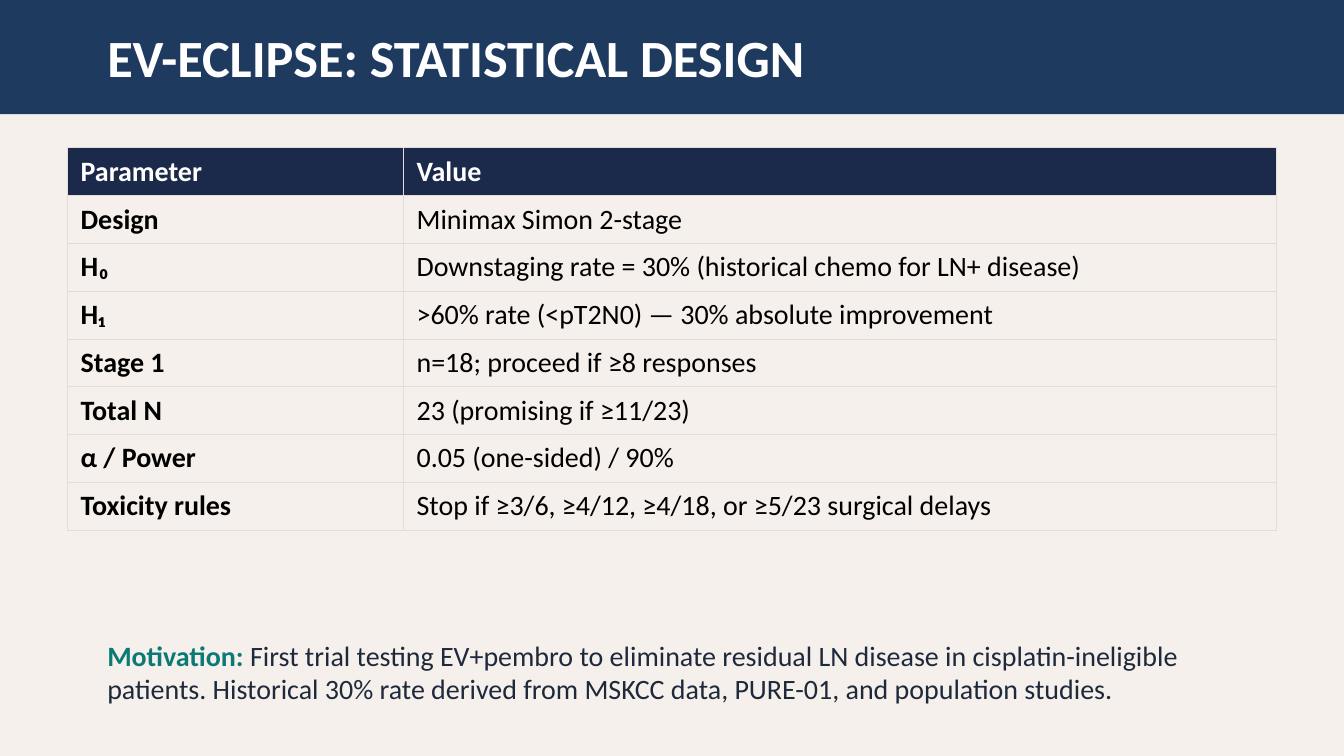
from lxml import etree
from pptx import Presentation
from pptx.dml.color import RGBColor
from pptx.enum import shapes, text
from pptx.oxml import ns
from pptx.util import Pt


def color(hex_string):
    return RGBColor.from_string(hex_string)


def style_run(run, size, hex_string, bold):
    run.font.name = "Calibri"
    run.font.size = Pt(size)
    run.font.bold = bold
    run.font.color.rgb = color(hex_string)


presentation = Presentation()
presentation.slide_width, presentation.slide_height = Pt(720), Pt(405)
slide = presentation.slides.add_slide(presentation.slide_layouts[6])
slide.background.fill.solid()
slide.background.fill.fore_color.rgb = color("F5F0EB")

# Title band
band = slide.shapes.add_shape(shapes.MSO_SHAPE.RECTANGLE, 0, 0, Pt(720), Pt(61.2))
band.shadow.inherit = False
band.fill.solid()
band.fill.fore_color.rgb = color("1E3A5F")
band.line.fill.background()

# Title and motivation text
text_blocks = [
    (8.64, 43.2, 28, [("EV-ECLIPSE: STATISTICAL DESIGN", "FFFFFF", True)]),
    (331.2, 57.6, 15, [
        ("Motivation: ", "0B7A75", True),
        ("First trial testing EV+pembro to eliminate residual LN disease in "
         "cisplatin-ineligible patients. Historical 30% rate derived from MSKCC data, "
         "PURE-01, and population studies.", "1E293B", False),
    ]),
]
for top, height, size, parts in text_blocks:
    box = slide.shapes.add_textbox(Pt(50.4), Pt(top), Pt(619.2), Pt(height))
    box.text_frame.word_wrap = True
    box.text_frame.vertical_anchor = text.MSO_ANCHOR.MIDDLE
    for wording, hex_string, bold in parts:
        run = box.text_frame.paragraphs[0].add_run()
        run.text = wording
        style_run(run, size, hex_string, bold)

# Design parameters table
rows = [
    ("Parameter", "Value"),
    ("Design", "Minimax Simon 2-stage"),
    ("H₀", "Downstaging rate = 30% (historical chemo for LN+ disease)"),
    ("H₁", ">60% rate (<pT2N0) — 30% absolute improvement"),
    ("Stage 1", "n=18; proceed if ≥8 responses"),
    ("Total N", "23 (promising if ≥11/23)"),
    ("α / Power", "0.05 (one-sided) / 90%"),
    ("Toxicity rules", "Stop if ≥3/6, ≥4/12, ≥4/18, or ≥5/23 surgical delays"),
]
row_height = 25.6
table = slide.shapes.add_table(len(rows), 2, Pt(36), Pt(79.2), Pt(648),
                               Pt(row_height * len(rows))).table
table.horz_banding = False
table.columns[0].width, table.columns[1].width = Pt(180), Pt(468)

for row_index, row in enumerate(rows):
    table.rows[row_index].height = Pt(row_height)
    is_header = row_index == 0
    for column_index, wording in enumerate(row):
        cell = table.cell(row_index, column_index)
        cell.text_frame.text = wording
        style_run(cell.text_frame.paragraphs[0].runs[0], 15,
                  "FFFFFF" if is_header else "000000", is_header or column_index == 0)

        # Borders come before the fill in the cell properties
        properties = cell._tc.get_or_add_tcPr()
        for side in ("a:lnL", "a:lnR", "a:lnT", "a:lnB"):
            border = etree.SubElement(properties, ns.qn(side), w=str(Pt(0.5)))
            border_fill = etree.SubElement(border, ns.qn("a:solidFill"))
            etree.SubElement(border_fill, ns.qn("a:srgbClr"), val="E2DDD7")
        if is_header:
            cell.fill.solid()
            cell.fill.fore_color.rgb = color("1B2A4A")
        else:
            cell.fill.background()

presentation.save("out.pptx")
